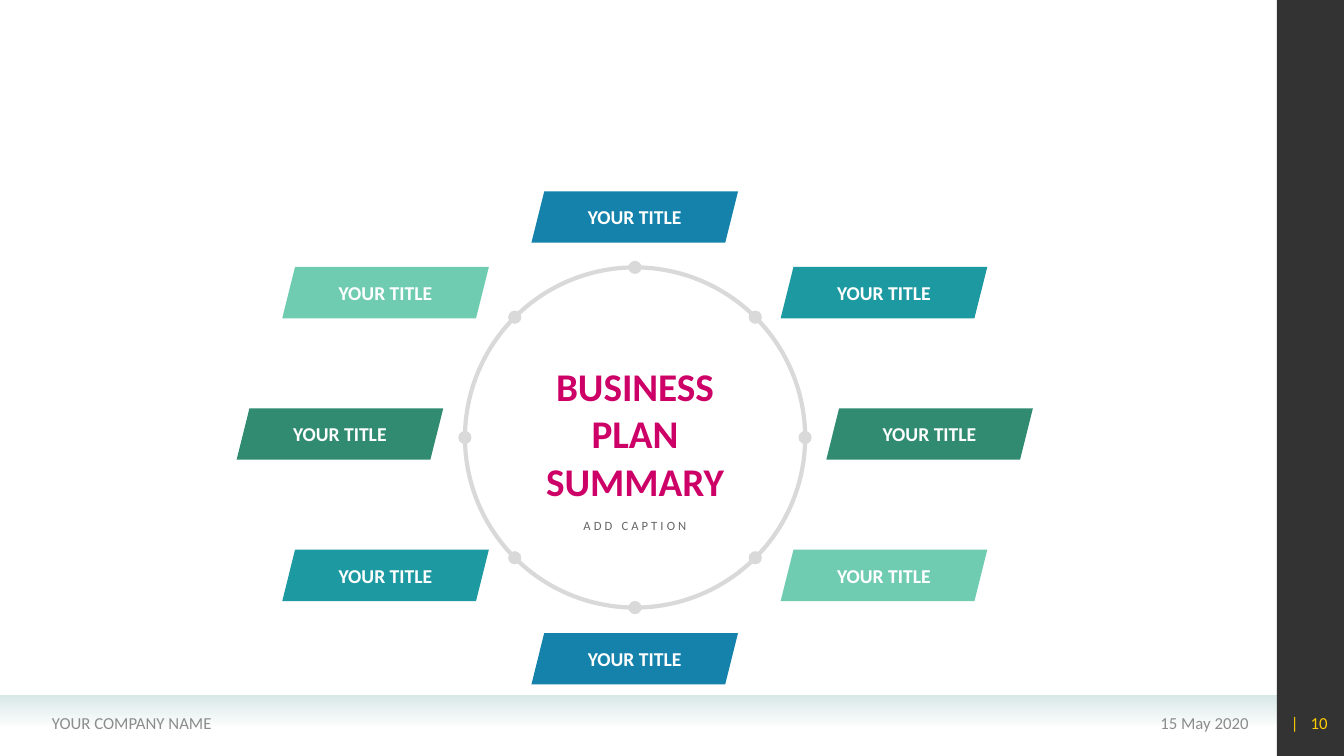
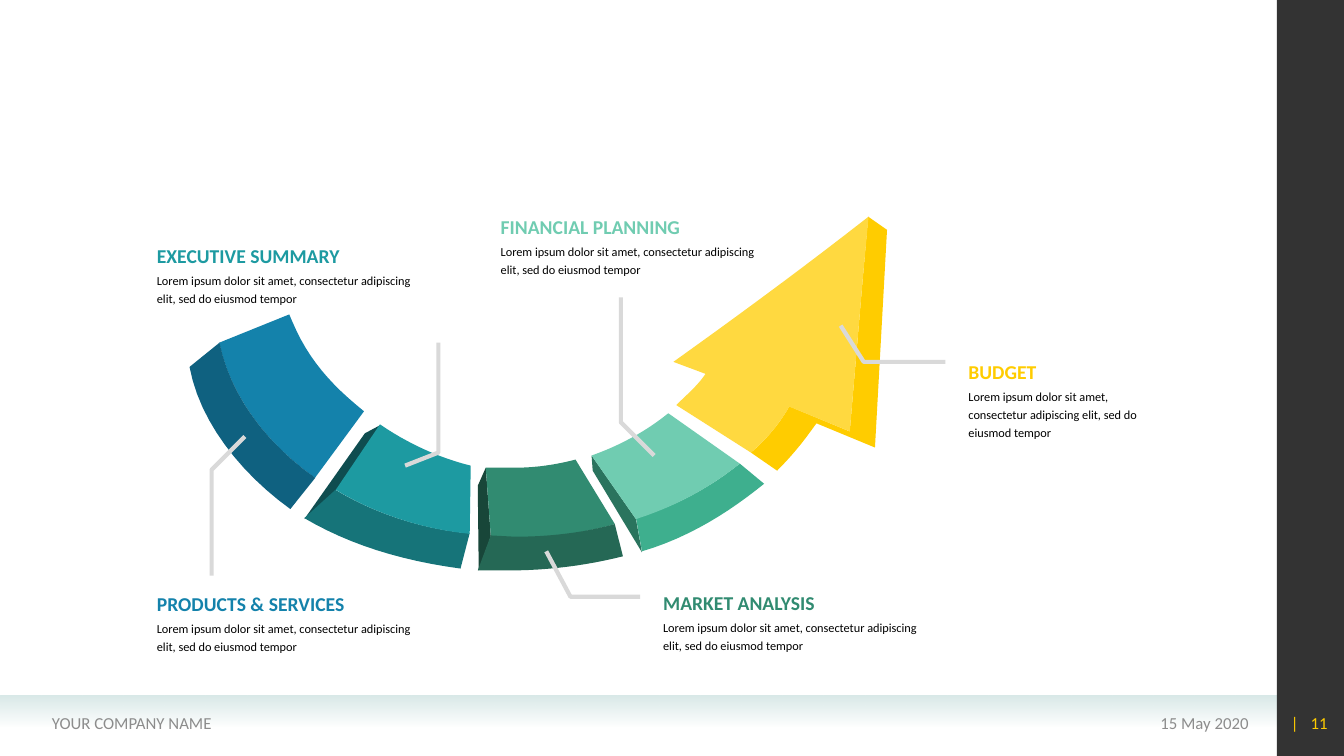
"""Build two business plan slides: a summary wheel and a segmented growth arrow."""
import math

import pptx
import pptx.dml.color
import pptx.enum.shapes
import pptx.enum.text
import pptx.oxml.ns
import pptx.util

Pt = pptx.util.Pt
SHAPE = pptx.enum.shapes.MSO_SHAPE
ALIGN = pptx.enum.text.PP_ALIGN
ANCHOR = pptx.enum.text.MSO_ANCHOR

COLORS = {
    "band": "D9E9E8", "bar": "000000", "footer": "8C8C8C", "page": "FFCC00",
    "ring": "D9D9D9", "title": "CC0066", "caption": "666666",
    "white": "FFFFFF", "text": "000000",
    "blue": "1482AB", "blue_dark": "0F6180",
    "teal": "1D9AA1", "teal_dark": "167479", "teal_deep": "0F4D50",
    "green": "318B71", "green_dark": "256855", "green_deep": "184639",
    "mint": "70CCB1", "mint_dark": "3EAF8E", "mint_deep": "2A745E",
    "yellow": "FFD940", "yellow_dark": "FFCC00",
}
FONTS = {
    "footer": {"name": "Calibri", "size": Pt(12)},
    "heading": {"name": "Calibri", "size": Pt(14), "bold": True},
    "title": {"name": "Calibri", "size": Pt(28), "bold": True},
    "caption": {"name": "Calibri", "size": Pt(9)},
    "body": {"name": "Calibri", "size": Pt(8.8)},
}
NO_MARGINS = {"margin_left": 0, "margin_right": 0, "margin_top": 0, "margin_bottom": 0}

WHEEL_CENTER = (453.6, 312.5)
WHEEL_RADIUS = 121.5
LABEL_CENTER = (453.4, 310)
LABEL_SIZE = (147.6, 36.7)
LABEL_OFFSETS = [(0, -155), (178, -101), (210.6, 0), (178, 101),
                 (0, 160.5), (-178, 101), (-210.6, 0), (-178, -101)]
LABEL_COLORS = ["blue", "teal", "green", "mint"]

FACETS = [
    ("blue", [(260, 293.8), (236.8, 275, 220.4, 257.1, 208.8, 229.7), (206.6, 224.6),
              (156.6, 244.8), (164.5, 282.2, 190, 316.7, 225, 341.3)]),
    ("blue_dark", [(156.8, 244.8), (135.4, 262.1),
                   (142.6, 300.9, 171.4, 337.6, 207.4, 363.6), (225.2, 341.3),
                   (190, 316.7, 164.5, 282.2, 156.8, 244.8)]),
    ("yellow_dark", [(620.2, 154.8), (616.3, 199), (607, 308.2), (563.8, 290.3),
                     (556.6, 303, 548, 313.1, 536.4, 323.3), (555.1, 336.2),
                     (570.9, 320.4, 578.8, 308.2, 583.2, 302.4), (625, 319.7),
                     (633.6, 164.2)]),
    ("yellow", [(620.4, 154.8), (554.4, 206.6, 481, 258.5, 481, 258.5), (504, 267.1),
                (498.2, 275.7, 490.3, 282.2, 483.1, 289.4), (536.4, 323.3),
                (548, 313.1, 556.6, 303, 563.8, 290.5), (607, 308.2), (616.3, 199)]),
    ("teal_deep", [(240.5, 349.9), (271.4, 303.8), (260.6, 309.6), (217.4, 370.8)]),
    ("teal_dark", [(239.6, 349.9), (217.4, 370.1),
                   (249.2, 388.7, 285.8, 400.3, 329, 406.1), (335.5, 381),
                   (299.5, 377.8, 266, 365.7, 239.6, 349.9)]),
    ("teal", [(271.4, 303.1), (239.8, 349.9),
              (266, 365.7, 299.5, 377.8, 335.5, 381.3), (336.2, 332.6),
              (313.2, 327, 290.2, 316.1, 271.4, 303.1)]),
    ("green_deep", [(347, 334.1), (341.3, 347), (342, 407.5), (350.6, 383)]),
    ("green", [(347, 334.1), (350.6, 383), (367.9, 383.8),
               (393.1, 383.8, 416.9, 380.9, 439.2, 374.4), (411.1, 328.3),
               (397.4, 331.9, 383, 334.1, 367.9, 334.1)]),
    ("green_dark", [(350.6, 382.5), (341.3, 407.5), (362.9, 407.5),
                    (391.7, 407.5, 419, 403.9, 445, 397.4), (439.2, 374.4),
                    (416.9, 380.5, 393.1, 383.4, 367.9, 383.4)]),
    ("mint_deep", [(422.6, 325.4), (423.4, 336.2), (458.6, 394.6), (454.3, 370.8)]),
    ("mint_dark", [(454.3, 370.1), (458.6, 393.8),
                   (493.2, 383.8, 522.6, 364.4, 545.8, 345.6), (528.5, 331.2),
                   (506.9, 348.4, 483.1, 361.5, 454.3, 370.1)]),
    ("mint", [(422.6, 325.4), (454.3, 370.8),
              (483.1, 361.5, 506.9, 348.4, 528.5, 331.2), (477.4, 295.2),
              (461.4, 308.2, 442.8, 318.2, 422.6, 325.4)]),
]
LEADERS = [
    [(467.3, 325.4), (443.5, 301.7), (443.5, 212.4)],
    [(289.4, 332.6), (313.2, 323.3), (313.2, 244.8)],
    [(390.2, 393.8), (407.5, 426.2), (457.2, 426.2)],
    [(600.5, 232.6), (617, 258.5), (675.4, 258.5)],
    [(175, 311.8), (151.2, 335.5), (151.2, 411.1)],
]
LOREM = "Lorem ipsum dolor sit amet, consectetur adipiscing elit, sed do eiusmod tempor"
NOTES = [
    ("PRODUCTS & SERVICES", "blue", 105, 419, 208),
    ("EXECUTIVE SUMMARY", "teal", 105, 170.6, 208),
    ("FINANCIAL PLANNING", "mint", 350.6, 149.8, 208),
    ("MARKET ANALYSIS", "green", 466.6, 418.3, 208),
    ("BUDGET", "yellow_dark", 684.7, 253.4, 152),
]


def rgb(color):
    """Return the named colour as an RGB value."""
    return pptx.dml.color.RGBColor.from_string(COLORS[color])


def apply(target, values):
    """Set every attribute in values on the target."""
    for name, value in values.items():
        setattr(target, name, value)


def set_alpha(s, percents):
    """Give the shape's fill colours their opacities, in order."""
    colors = s.element.spPr.iter(pptx.oxml.ns.qn("a:srgbClr"))
    for color, percent in zip(colors, percents):
        alpha = color.makeelement(pptx.oxml.ns.qn("a:alpha"), {"val": str(percent * 1000)})
        color.append(alpha)


def write(p, text, font, color, align=ALIGN.LEFT):
    """Write one formatted run into a paragraph."""
    p.alignment = align
    r = p.add_run()
    r.text = text
    apply(r.font, FONTS[font])
    r.font.color.rgb = rgb(color)


def add_text(slide, box, text, font, color, align=ALIGN.LEFT, **frame):
    """Add a text box with one paragraph."""
    s = slide.shapes.add_textbox(*map(Pt, box))
    tf = s.text_frame
    apply(tf, {"word_wrap": True, **frame})
    write(tf.paragraphs[0], text, font, color, align)
    return s


def add_shape(slide, kind, box, color):
    """Add a flat preset shape without an outline."""
    s = slide.shapes.add_shape(kind, *map(Pt, box))
    s.shadow.inherit = False
    s.fill.solid()
    s.fill.fore_color.rgb = rgb(color)
    s.line.fill.background()
    return s


def centered(center, width, height):
    """Return the box of the given size around a centre."""
    return center[0] - width / 2, center[1] - height / 2, width, height


def flatten(outline, steps=12):
    """Turn line points and cubic segments into plain points."""
    points = [outline[0]]
    for segment in outline[1:]:
        if len(segment) == 2:
            points.append(segment)
            continue
        knots = [points[-1], segment[:2], segment[2:4], segment[4:]]
        for i in range(1, steps + 1):
            t = i / steps
            weights = [math.comb(3, k) * t ** k * (1 - t) ** (3 - k) for k in range(4)]
            points.append(tuple(sum(w * knot[axis] for w, knot in zip(weights, knots))
                                for axis in (0, 1)))
    return points


def add_outline(slide, outline, close):
    """Add a freeform through the outline."""
    points = [(Pt(x), Pt(y)) for x, y in flatten(outline)]
    builder = slide.shapes.build_freeform(*points[0])
    builder.add_line_segments(points[1:], close=close)
    s = builder.convert_to_shape()
    s.shadow.inherit = False
    return s


def add_facet(slide, color, outline):
    """Add one filled face of the arrow."""
    s = add_outline(slide, outline, True)
    s.fill.solid()
    s.fill.fore_color.rgb = rgb(color)
    s.line.fill.background()


def stroke(s):
    """Leave the shape unfilled with a grey outline."""
    s.fill.background()
    s.line.color.rgb = rgb("ring")
    s.line.width = Pt(3)


def add_note(slide, heading, color, left, top, width):
    """Add a coloured heading with its description."""
    s = add_text(slide, (left, top, width, 56), heading, "heading", color)
    p = s.text_frame.add_paragraph()
    apply(p, {"line_spacing": Pt(12.9), "space_before": Pt(1.7)})
    write(p, LOREM, "body", "text")


def add_frame(slide, page):
    """Add the band, side bar and footer texts."""
    band = add_shape(slide, SHAPE.RECTANGLE, (0, 496.5, 912, 22.5), "band")
    band.fill.gradient()
    band.fill.gradient_angle = 270
    for stop in band.fill.gradient_stops:
        stop.color.rgb = rgb("band")
    set_alpha(band, [100, 0])
    bar = add_shape(slide, SHAPE.RECTANGLE, (912, 0, 48, 540), "bar")
    set_alpha(bar, [80])
    for text, left, width, color, align in [
            ("15 May 2020", 655, 244, "footer", ALIGN.RIGHT),
            ("YOUR COMPANY NAME", 30, 353, "footer", ALIGN.LEFT),
            ("|", 910, 24.7, "page", ALIGN.RIGHT),
            (str(page), 915, 40.4, "page", ALIGN.RIGHT)]:
        add_text(slide, (left, 502, width, 29), text, "footer", color, align,
                 vertical_anchor=ANCHOR.MIDDLE)


def add_label(slide, offset, color):
    """Add one slanted label of the wheel."""
    center = [c + d for c, d in zip(LABEL_CENTER, offset)]
    s = add_shape(slide, SHAPE.PARALLELOGRAM, centered(center, *LABEL_SIZE), color)
    tf = s.text_frame
    apply(tf, {"word_wrap": False, "vertical_anchor": ANCHOR.MIDDLE, **NO_MARGINS})
    write(tf.paragraphs[0], "YOUR TITLE", "heading", "white", ALIGN.CENTER)


def add_wheel(slide):
    """Add the ring, its dots and the labels around it."""
    size = 2 * WHEEL_RADIUS
    stroke(add_shape(slide, SHAPE.OVAL, centered(WHEEL_CENTER, size, size), "ring"))
    for i, offset in enumerate(LABEL_OFFSETS):
        angle = 2 * math.pi * i / len(LABEL_OFFSETS)
        dot = (WHEEL_CENTER[0] + WHEEL_RADIUS * math.sin(angle),
               WHEEL_CENTER[1] - WHEEL_RADIUS * math.cos(angle))
        add_shape(slide, SHAPE.OVAL, centered(dot, 9.4, 9.4), "ring")
        add_label(slide, offset, LABEL_COLORS[i % len(LABEL_COLORS)])


def set_title(slide, box, text):
    """Place and format the slide title."""
    s = slide.shapes.title
    apply(s, dict(zip(("left", "top", "width", "height"), map(Pt, box))))
    tf = s.text_frame
    apply(tf, {"word_wrap": True, "auto_size": pptx.enum.text.MSO_AUTO_SIZE.NONE,
               "vertical_anchor": ANCHOR.MIDDLE})
    write(tf.paragraphs[0], text, "title", "title", ALIGN.CENTER)


def build_summary(prs):
    """Build the summary wheel slide."""
    slide = prs.slides.add_slide(prs.slide_layouts[5])
    add_frame(slide, 10)
    add_wheel(slide)
    set_title(slide, (368.6, 255, 170, 109), "BUSINESS PLAN SUMMARY")
    caption = add_text(slide, (406, 366.5, 95, 18), "ADD CAPTION", "caption", "caption",
                       ALIGN.CENTER, word_wrap=False)
    for props in caption.element.iter(pptx.oxml.ns.qn("a:rPr")):
        props.set("spc", "220")


def build_arrow(prs):
    """Build the segmented arrow slide."""
    slide = prs.slides.add_slide(prs.slide_layouts[6])
    add_frame(slide, 11)
    for color, outline in FACETS:
        add_facet(slide, color, outline)
    for leader in LEADERS:
        stroke(add_outline(slide, leader, False))
    for note in NOTES:
        add_note(slide, *note)


def main():
    """Build and save the presentation."""
    prs = pptx.Presentation()
    apply(prs, {"slide_width": Pt(960), "slide_height": Pt(540)})
    build_summary(prs)
    build_arrow(prs)
    prs.save("out.pptx")


if __name__ == "__main__":
    main()
